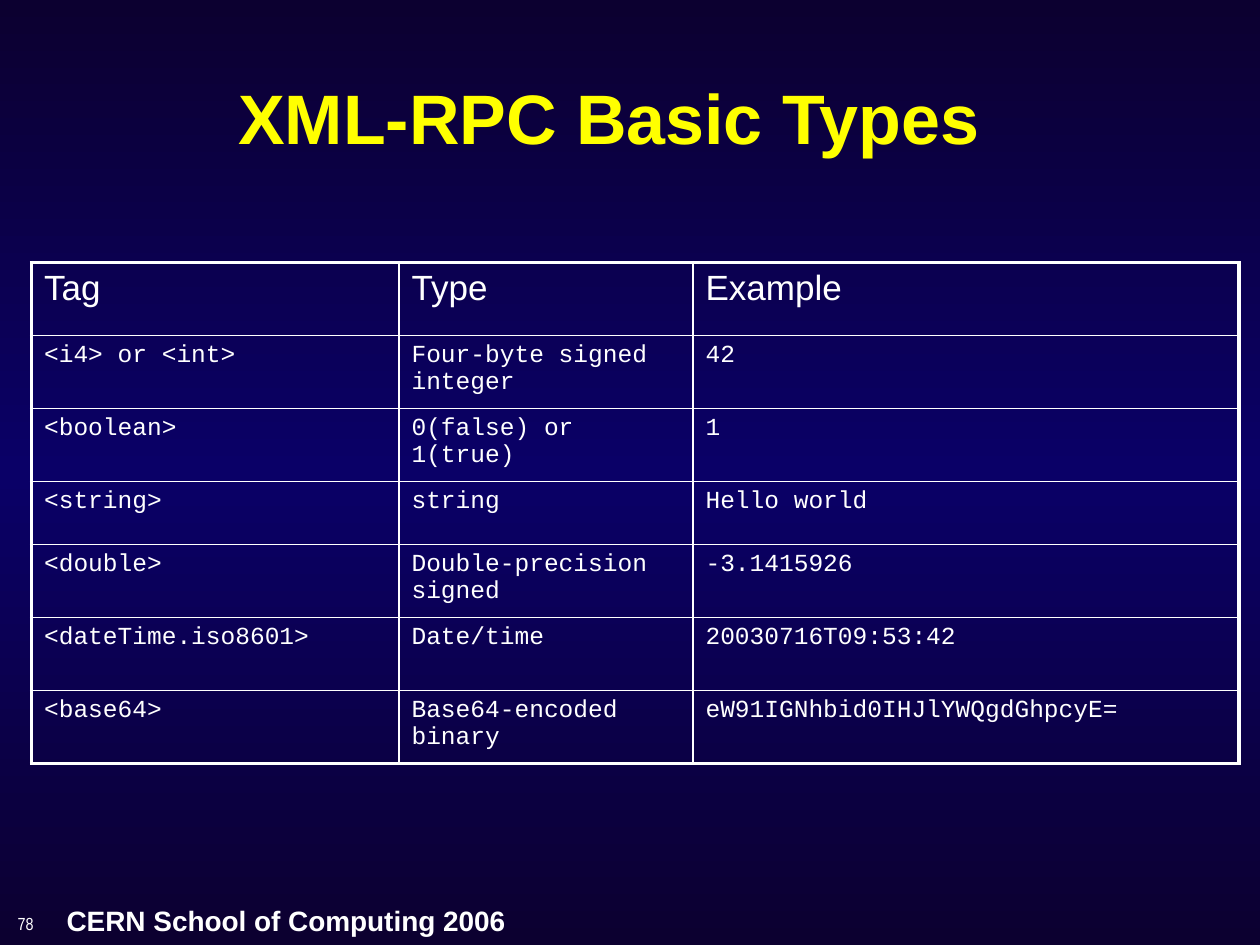
from copy import deepcopy
from dataclasses import dataclass

from lxml import etree
from pptx import Presentation
from pptx.dml.color import RGBColor
from pptx.enum.text import MSO_ANCHOR, PP_ALIGN
from pptx.oxml.ns import qn
from pptx.util import Pt

MIDDLE, TOP = MSO_ANCHOR.MIDDLE, MSO_ANCHOR.TOP
LEFT = PP_ALIGN.LEFT


@dataclass(frozen=True)
class Style:
    face: str
    size: float
    color: str = "FFFFFF"
    bold: bool = False


@dataclass(frozen=True)
class Theme:
    edge: str = "0C0030"
    glow: str = "0A0067"
    rule: str = "FFFFFF"
    thin: float = 1
    thick: float = 2.25
    title: Style = Style("Arial", 40, "FFFF00", True)
    head: Style = Style("Arial", 20)
    code: Style = Style("Courier New", 14)
    event: Style = Style("Arial", 16, bold=True)
    page: Style = Style("Arial Narrow", 10)


@dataclass(frozen=True)
class Box:
    left: float
    top: float
    width: float
    height: float

    def place(self) -> tuple:
        return Pt(self.left), Pt(self.top), Pt(self.width), Pt(self.height)


@dataclass(frozen=True)
class Label:
    text: str
    box: Box
    style: Style
    anchor: MSO_ANCHOR


THEME = Theme()
TITLE_BOX = Box(129, 16, 591, 101)
TABLE_BOX = Box(18, 150, 690, 286.2)
WIDTHS = (210, 168, 312)
HEIGHTS = (41.7, 41.7, 41.7, 36, 41.7, 41.7, 41.7)
ROWS = (
    ("Tag", "Type", "Example"),
    ("<i4> or <int>", "Four-byte signed integer", "42"),
    ("<boolean>", "0(false) or 1(true)", "1"),
    ("<string>", "string", "Hello world"),
    ("<double>", "Double-precision signed", "-3.1415926"),
    ("<dateTime.iso8601>", "Date/time", "20030716T09:53:42"),
    ("<base64>", "Base64-encoded binary", "eW91IGNhbid0IHJlYWQgdGhpcyE="),
)
LABELS = (
    Label("CERN School of Computing 2006", Box(31, 512.6, 266, 26.6), THEME.event, TOP),
    Label("78", Box(3, 515.5, 150, 24), THEME.page, MIDDLE),
)


def write(frame, text: str, style: Style) -> None:
    frame.text = text
    para = frame.paragraphs[0]
    para.alignment = LEFT
    font = para.font
    font.name, font.size, font.bold = style.face, Pt(style.size), style.bold
    font.color.rgb = RGBColor.from_string(style.color)


def paint(slide) -> None:
    fill = slide.background.fill
    fill.gradient()
    fill.gradient_angle = 90
    stops = slide.element.find(".//" + qn("a:gsLst"))
    stops.append(deepcopy(stops[0]))
    shades = (THEME.edge, THEME.glow, THEME.edge)
    for i, (stop, shade) in enumerate(zip(fill.gradient_stops, shades)):
        stop.position = i / 2
        stop.color.rgb = RGBColor.from_string(shade)


def add_title(slide, text: str) -> None:
    title = slide.shapes.title
    title.left, title.top, title.width, title.height = TITLE_BOX.place()
    title.text_frame.vertical_anchor = MIDDLE
    write(title.text_frame, text, THEME.title)


def add_label(slide, label: Label) -> None:
    frame = slide.shapes.add_textbox(*label.box.place()).text_frame
    frame.word_wrap = False
    frame.vertical_anchor = label.anchor
    write(frame, label.text, label.style)


def add_rule(cell, side: str, weight: float) -> None:
    props = cell._tc.get_or_add_tcPr()
    line = etree.SubElement(props, qn("a:ln" + side), w=str(Pt(weight)))
    solid = etree.SubElement(line, qn("a:solidFill"))
    etree.SubElement(solid, qn("a:srgbClr"), val=THEME.rule)


def add_grid(slide) -> None:
    last_row, last_col = len(ROWS) - 1, len(WIDTHS) - 1
    table = slide.shapes.add_table(len(ROWS), len(WIDTHS), *TABLE_BOX.place()).table
    table.first_row = table.horz_banding = False
    for col, width in zip(table.columns, WIDTHS):
        col.width = Pt(width)
    for row, height in zip(table.rows, HEIGHTS):
        row.height = Pt(height)
    for r, texts in enumerate(ROWS):
        for c, text in enumerate(texts):
            cell = table.cell(r, c)
            write(cell.text_frame, text, THEME.code if r else THEME.head)
            # Thick rules on the outer frame, thin ones inside
            outer = {"L": c == 0, "R": c == last_col, "T": r == 0, "B": r == last_row}
            for side, edge in outer.items():
                add_rule(cell, side, THEME.thick if edge else THEME.thin)
            cell.fill.background()


def main() -> None:
    deck = Presentation()
    deck.slide_width, deck.slide_height = Pt(720), Pt(540)
    slide = deck.slides.add_slide(deck.slide_layouts.get_by_name("Title Only"))
    # Backdrop and title
    paint(slide)
    add_title(slide, "XML-RPC Basic Types")
    # Table of types
    add_grid(slide)
    # Footer
    for label in LABELS:
        add_label(slide, label)
    deck.save("out.pptx")


if __name__ == "__main__":
    main()
